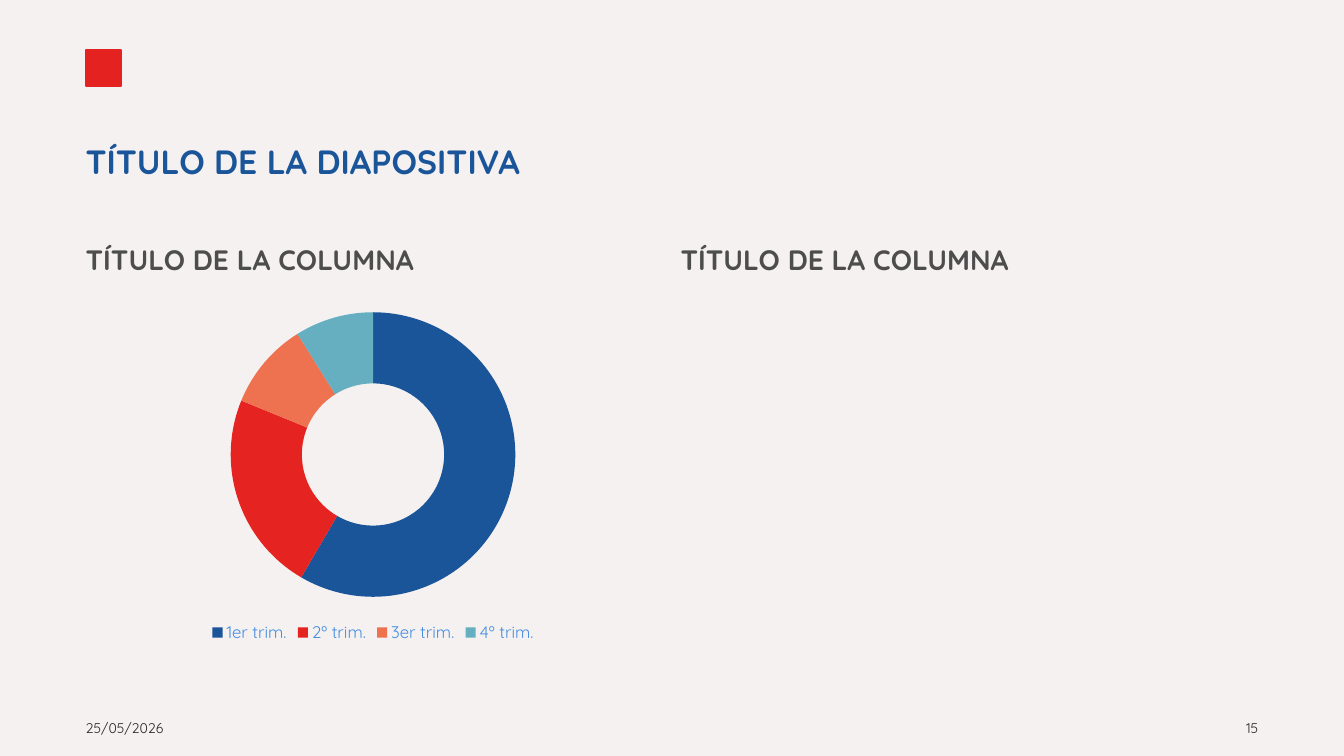
"""Build the slide with a column title pair and a quarterly doughnut chart."""
from pptx import Presentation
from pptx.chart.data import CategoryChartData
from pptx.dml.color import RGBColor
from pptx.enum.chart import XL_CHART_TYPE as ChartType, XL_LEGEND_POSITION as LegendPosition
from pptx.enum.shapes import MSO_SHAPE as Shape
from pptx.enum.text import MSO_ANCHOR as Anchor, PP_ALIGN as Align
from pptx.oxml.ns import qn
from pptx.util import Inches, Pt

FONT = "Quicksand"
PAPER = RGBColor(0xF4, 0xF1, 0xF0)
MARK_RED = RGBColor(0xE4, 0x22, 0x1F)
BLUE = RGBColor(0x1A, 0x55, 0x9A)
RED = RGBColor(0xE5, 0x23, 0x20)
ORANGE = RGBColor(0xEE, 0x72, 0x50)
TEAL = RGBColor(0x65, 0xAF, 0xC0)
LEGEND_BLUE = RGBColor(0x47, 0x8E, 0xE0)
GRAY = RGBColor(0x4D, 0x4D, 0x4D)
DARK = RGBColor(0x29, 0x29, 0x29)
LEFT = 0.85


def style_font(font, size, color, bold=False):
    values = {"name": FONT, "size": Pt(size), "bold": bold}
    for name, value in values.items():
        setattr(font, name, value)
    font.color.rgb = color


deck = Presentation()
deck.slide_width, deck.slide_height = Inches(13.33), Inches(7.5)
slide = deck.slides.add_slide(deck.slide_layouts[6])
slide.background.fill.solid()
slide.background.fill.fore_color.rgb = PAPER

mark = slide.shapes.add_shape(Shape.RECTANGLE, Inches(LEFT), Inches(0.5), Inches(0.35), Inches(0.35))
mark.shadow.inherit = False
mark.fill.solid()
mark.fill.fore_color.rgb = MARK_RED
mark.line.color.rgb = MARK_RED
mark.line.width = Pt(1.5)

heading = {"anchor": Anchor.BOTTOM, "bold": True, "spacing": 0.9, "align": Align.LEFT}
title = heading | {"size": 24, "color": BLUE, "top_inset": 0.08, "bottom_inset": 0}
column = heading | {"size": 20, "color": GRAY, "top_inset": 0, "bottom_inset": 0}
footer = {"anchor": Anchor.TOP, "bold": False, "spacing": 1.0, "align": Align.LEFT,
          "size": 10, "color": DARK, "top_inset": 0.05, "bottom_inset": 0.05}
texts = [
    ("TÍTULO DE LA DIAPOSITIVA", (LEFT, 0.85, 11.63, 0.95), title),
    ("TÍTULO DE LA COLUMNA", (LEFT, 1.84, 5.71, 0.9), column),
    ("TÍTULO DE LA COLUMNA", (6.75, 1.84, 5.73, 0.9), column),
    ("15", (9.53, 7.09, 2.95, 0.4), footer | {"align": Align.RIGHT}),
    ("25/05/2026", (LEFT, 7.09, 3, 0.4), footer),
]
for words, place, style in texts:
    box = slide.shapes.add_textbox(*map(Inches, place))
    frame = box.text_frame
    frame_values = {
        "word_wrap": True,
        "vertical_anchor": style["anchor"],
        "margin_left": 0,
        "margin_right": 0,
        "margin_top": Inches(style["top_inset"]),
        "margin_bottom": Inches(style["bottom_inset"]),
    }
    for name, value in frame_values.items():
        setattr(frame, name, value)
    para = frame.paragraphs[0]
    para.alignment = style["align"]
    para.line_spacing = style["spacing"]
    span = para.add_run()
    span.text = words
    style_font(span.font, style["size"], style["color"], style["bold"])

quarters = {
    "1er trim.": (59, BLUE),
    "2º trim.": (23, RED),
    "3er trim.": (10, ORANGE),
    "4º trim.": (9, TEAL),
}
data = CategoryChartData()
data.categories = list(quarters)
data.add_series("Series 1", [value for value, color in quarters.values()])
chart = slide.shapes.add_chart(
    ChartType.DOUGHNUT, Inches(LEFT), Inches(2.96), Inches(5.7), Inches(3.46), data
).chart
chart.has_title = False
style_font(chart.font, 10, BLUE)
chart.has_legend = True
chart.legend.position = LegendPosition.BOTTOM
chart.legend.include_in_layout = False
style_font(chart.legend.font, 12, LEGEND_BLUE)

plot = chart.plots[0]
plot.vary_by_categories = True
plot._element.find(qn("c:holeSize")).set("val", "75")
for index, (value, color) in enumerate(quarters.values()):
    point = plot.series[0].points[index]
    point.format.fill.solid()
    point.format.fill.fore_color.rgb = color
    point.format.line.fill.background()

deck.save("out.pptx")
